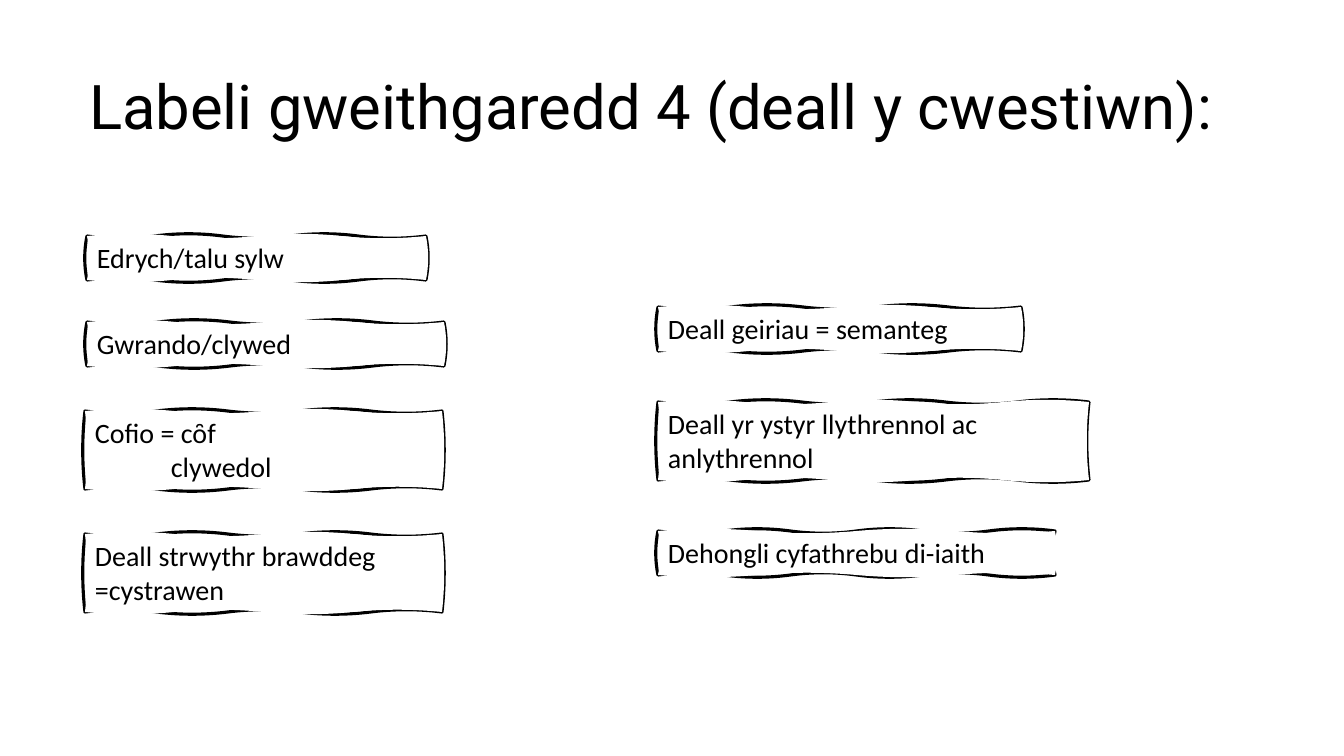
import copy
import math

from lxml import etree
from pptx import Presentation
from pptx import util as u
from pptx.dml.color import RGBColor
from pptx.enum import text
from pptx.oxml.ns import qn

PX = u.Inches(1) / 100.8
COLOURS = {"ink": "000000", "paper": "FFFFFF"}
ONE_LINE, TWO_LINES = 44, 78
LABELS = [
    (87, 236, 339, ONE_LINE, ["Edrych/talu sylw"]),
    (87, 322, 357, ONE_LINE, ["Gwrando/clywed"]),
    (85, 411, 357, TWO_LINES, ["Cofio = cȏf", "clywedol"]),
    (85, 534, 357, TWO_LINES, ["Deall strwythr brawddeg =cystrawen"]),
    (658, 307, 363, ONE_LINE, ["Deall geiriau = semanteg"]),
    (658, 402, 431, TWO_LINES, ["Deall yr ystyr llythrennol ac anlythrennol"]),
    (658, 531, 397, ONE_LINE, ["Dehongli cyfathrebu di-iaith"]),
]
SECOND_LINE_INDENT = 76
WAVE_HEIGHT = 3
STROKE_WAVE, COVER_WAVE = 70, 90


def emu(px):
    """Turn px into EMU."""
    return u.Emu(round(px * PX))


def colour(name):
    """Return a named colour."""
    return RGBColor.from_string(COLOURS[name])


def add_run(paragraph, words, size, font):
    """Add one formatted run to a paragraph."""
    run = paragraph.add_run()
    run.text = words
    run.font.size = u.Pt(size)
    run.font.name = font
    run.font.color.rgb = colour("ink")


def edge_nodes(left, top, width, height, wave):
    """Return the EMU points around a rectangle where waves meet its edge."""
    corners = [(left, top), (left + width, top),
               (left + width, top + height), (left, top + height)]
    nodes = [corners[0]]
    for (x0, y0), (x1, y1) in zip(corners, corners[1:] + corners[:1]):
        waves = max(1, round(math.hypot(x1 - x0, y1 - y0) / wave))
        nodes += [(x0 + (x1 - x0) * n / waves, y0 + (y1 - y0) * n / waves)
                  for n in range(1, waves + 1)]
    return [(emu(x), emu(y)) for x, y in nodes]


def bend(path, sign):
    """Turn the straight segments of a path into alternating waves."""
    x0 = y0 = 0
    for segment in path.findall(qn("a:lnTo")):
        end = segment[0]
        x1, y1 = int(end.get("x")), int(end.get("y"))
        length = math.hypot(x1 - x0, y1 - y0)
        sway = sign * emu(WAVE_HEIGHT) / length
        segment.tag = qn("a:cubicBezTo")
        for third in (1, 2):
            handle = etree.Element(qn("a:pt"))
            handle.set("x", str(round(x0 + (x1 - x0) * third / 3 - (y1 - y0) * sway)))
            handle.set("y", str(round(y0 + (y1 - y0) * third / 3 + (x1 - x0) * sway)))
            end.addprevious(handle)
        x0, y0, sign = x1, y1, -sign


def sketch_box(slide, left, top, width, height):
    """Draw a wavy line partly covered by a differently waved fill."""
    stroke = edge_nodes(left, top, width, height, STROKE_WAVE)
    cover = edge_nodes(left, top, width, height, COVER_WAVE)
    builder = slide.shapes.build_freeform(*stroke[0], scale=1.0)
    builder.add_line_segments(stroke[1:], close=True)
    builder.move_to(*cover[0])
    builder.add_line_segments(cover[1:], close=True)
    box = builder.convert_to_shape()

    line_path = next(box._element.iter(qn("a:path")))
    fill_path = copy.deepcopy(line_path)
    line_path.addnext(fill_path)
    split = len(stroke) + 1
    del line_path[split:]
    del fill_path[:split]
    line_path.set("fill", "none")
    fill_path.set("stroke", "0")
    bend(line_path, 1)
    bend(fill_path, -1)

    box.shadow.inherit = False
    box.fill.solid()
    box.fill.fore_color.rgb = colour("paper")
    box.line.color.rgb = colour("ink")
    box.line.width = u.Pt(2.25)
    return box


def add_label(slide, left, top, width, height, lines):
    """Add a sketched box with its label."""
    frame = sketch_box(slide, left, top, width, height).text_frame
    frame.word_wrap = True
    frame.auto_size = text.MSO_AUTO_SIZE.SHAPE_TO_FIT_TEXT
    frame.vertical_anchor = text.MSO_ANCHOR.TOP
    for number, words in enumerate(lines):
        paragraph = frame.add_paragraph() if number else frame.paragraphs[0]
        paragraph.alignment = text.PP_ALIGN.LEFT
        if number:
            paragraph._p.get_or_add_pPr().set("marL", str(emu(SECOND_LINE_INDENT)))
        add_run(paragraph, words, 20, "Calibri")


def set_title(slide, words):
    """Place and format the slide title."""
    title = slide.shapes.title
    title.left, title.top, title.width, title.height = map(emu, (79, 37, 1159, 146))
    frame = title.text_frame
    frame.word_wrap = True
    frame.auto_size = text.MSO_AUTO_SIZE.NONE
    frame.vertical_anchor = text.MSO_ANCHOR.MIDDLE
    heading = frame.paragraphs[0]
    heading.alignment = text.PP_ALIGN.LEFT
    heading.line_spacing = 0.9
    add_run(heading, words, 44, "Roboto")


def main():
    """Build the slide of activity labels."""
    deck = Presentation()
    deck.slide_width, deck.slide_height = emu(1344), emu(756)
    slide = deck.slides.add_slide(deck.slide_layouts[5])
    set_title(slide, "Labeli gweithgaredd 4 (deall y cwestiwn):")
    for label in LABELS:
        add_label(slide, *label)
    deck.save("out.pptx")


if __name__ == "__main__":
    main()
